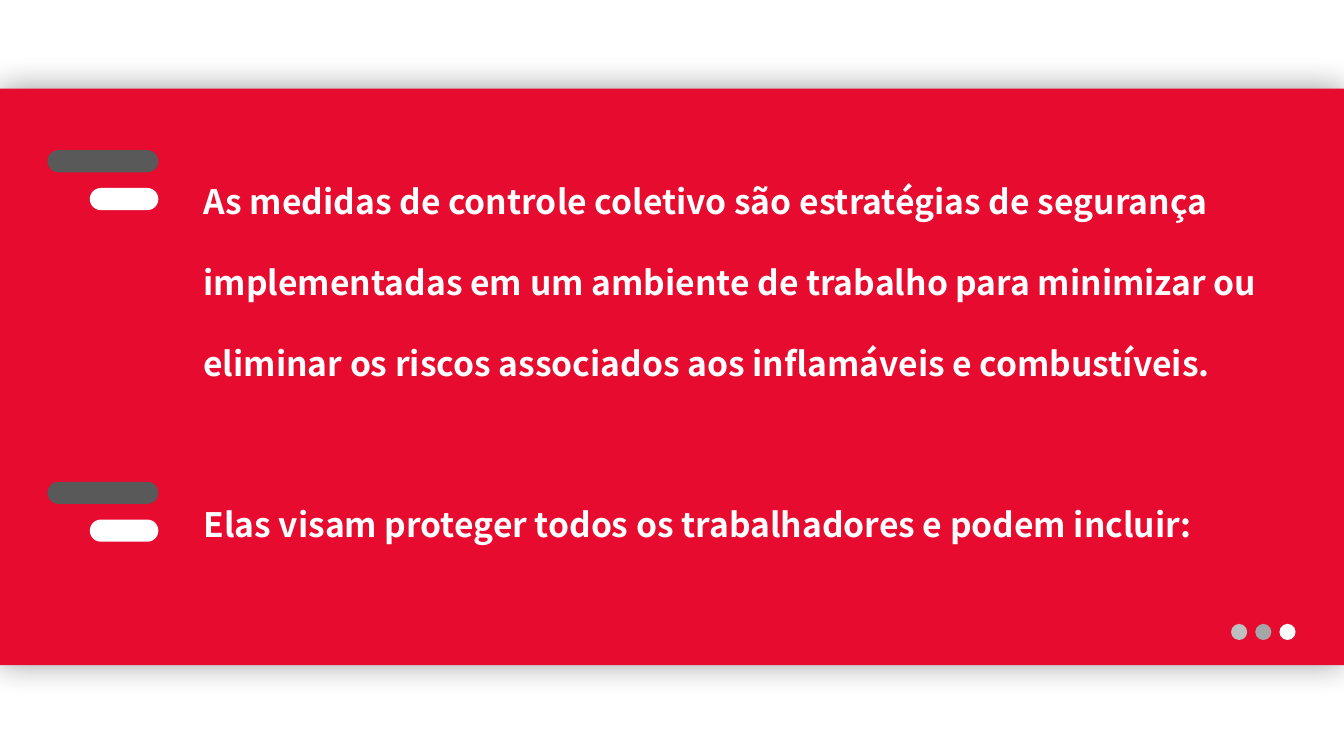
from dataclasses import dataclass
from typing import Any

from lxml import etree
from pptx import Presentation
from pptx import util as u
from pptx.dml.color import RGBColor
from pptx.enum import shapes, text
from pptx.oxml import ns

SLIDE_WIDTH = u.Inches(13.33)
SLIDE_HEIGHT = u.Inches(7.5)


@dataclass(frozen=True)
class Theme:
    red: str = "E60B2F"
    white: str = "FFFFFF"
    dark_gray: str = "595959"
    light_gray: str = "BFBFBF"
    medium_gray: str = "A6A6A6"
    shadow: str = "000000"
    font: str = "Noto Sans CJK SC"
    body_size: float = 24
    line_spacing: float = 2
    paragraph_gap: float = 57.5


@dataclass(frozen=True)
class Frame:
    """Position and size as percentages of the slide."""

    left: float
    top: float
    width: float
    height: float

    def lengths(self) -> tuple[int, int, int, int]:
        return (
            round(SLIDE_WIDTH * self.left / 100),
            round(SLIDE_HEIGHT * self.top / 100),
            round(SLIDE_WIDTH * self.width / 100),
            round(SLIDE_HEIGHT * self.height / 100),
        )


@dataclass(frozen=True)
class Bar:
    left: float
    width: float
    color: str


THEME = Theme()

BAND = Frame(0, 11.73, 100, 76.27)
BODY = Frame(14.4, 18, 83.05, 53.6)

MARKER_TOPS = (19.87, 63.73)
MARKER_BARS = (Bar(3.53, 8.25, THEME.dark_gray), Bar(6.68, 5.1, THEME.white))
BAR_HEIGHT = 2.93
BAR_STEP = 5

FIRST_DOT = Frame(91.6, 82.53, 1.2, 2.13)
DOT_STEP = 1.8
DOT_COLORS = (THEME.light_gray, THEME.medium_gray, THEME.white)

PARAGRAPHS = (
    "As medidas de controle coletivo são estratégias de segurança "
    "implementadas em um ambiente de trabalho para minimizar ou eliminar "
    "os riscos associados aos inflamáveis e combustíveis.",
    "Elas visam proteger todos os trabalhadores e podem incluir:",
)


def add_box(parent: Any, kind: Any, frame: Frame, color: str) -> Any:
    box = parent.shapes.add_shape(kind, *frame.lengths())
    box.shadow.inherit = False
    box.fill.solid()
    box.fill.fore_color.rgb = RGBColor.from_string(color)
    box.line.fill.background()
    return box


def add_glow_shadow(box: Any, *, color: str, opacity: int, blur: float) -> None:
    effects = box._element.spPr.find(ns.qn("a:effectLst"))
    shadow = etree.SubElement(effects, ns.qn("a:outerShdw"))
    shadow.set("blurRad", str(u.Pt(blur)))
    shadow.set("dist", "0")
    shadow.set("algn", "ctr")
    shadow.set("rotWithShape", "0")
    tint = etree.SubElement(shadow, ns.qn("a:srgbClr"), val=color)
    etree.SubElement(tint, ns.qn("a:alpha"), val=str(opacity * 1000))


def add_dots(page: Any) -> None:
    group = page.shapes.add_group_shape()
    for index, color in enumerate(DOT_COLORS):
        left = FIRST_DOT.left + index * DOT_STEP
        frame = Frame(left, FIRST_DOT.top, FIRST_DOT.width, FIRST_DOT.height)
        add_box(group, shapes.MSO_SHAPE.OVAL, frame, color)


def add_marker(page: Any, top: float) -> None:
    group = page.shapes.add_group_shape()
    for index, bar in enumerate(MARKER_BARS):
        frame = Frame(bar.left, top + index * BAR_STEP, bar.width, BAR_HEIGHT)
        box = add_box(group, shapes.MSO_SHAPE.ROUNDED_RECTANGLE, frame, bar.color)
        box.adjustments[0] = 0.5


def write_para(
    para: Any, words: str, *, size: float, color: str, bold: bool, gap: float
) -> None:
    para.line_spacing = THEME.line_spacing
    para.space_before = u.Pt(gap)
    span = para.add_run()
    span.text = words
    span.font.name = THEME.font
    span.font.size = u.Pt(size)
    span.font.bold = bold
    span.font.color.rgb = RGBColor.from_string(color)


def add_body(page: Any) -> None:
    frame = page.shapes.add_textbox(*BODY.lengths()).text_frame
    frame.word_wrap = True
    frame.vertical_anchor = text.MSO_ANCHOR.TOP
    for index, words in enumerate(PARAGRAPHS):
        para = frame.add_paragraph() if index else frame.paragraphs[0]
        write_para(
            para,
            words,
            size=THEME.body_size,
            color=THEME.white,
            bold=True,
            gap=THEME.paragraph_gap if index else 0,
        )


def main() -> None:
    deck = Presentation()
    deck.slide_width = SLIDE_WIDTH
    deck.slide_height = SLIDE_HEIGHT
    page = deck.slides.add_slide(deck.slide_layouts[6])
    band = add_box(page, shapes.MSO_SHAPE.RECTANGLE, BAND, THEME.red)
    add_glow_shadow(band, color=THEME.shadow, opacity=40, blur=24)
    add_dots(page)
    add_body(page)
    for top in MARKER_TOPS:
        add_marker(page, top)
    deck.save("out.pptx")


if __name__ == "__main__":
    main()
